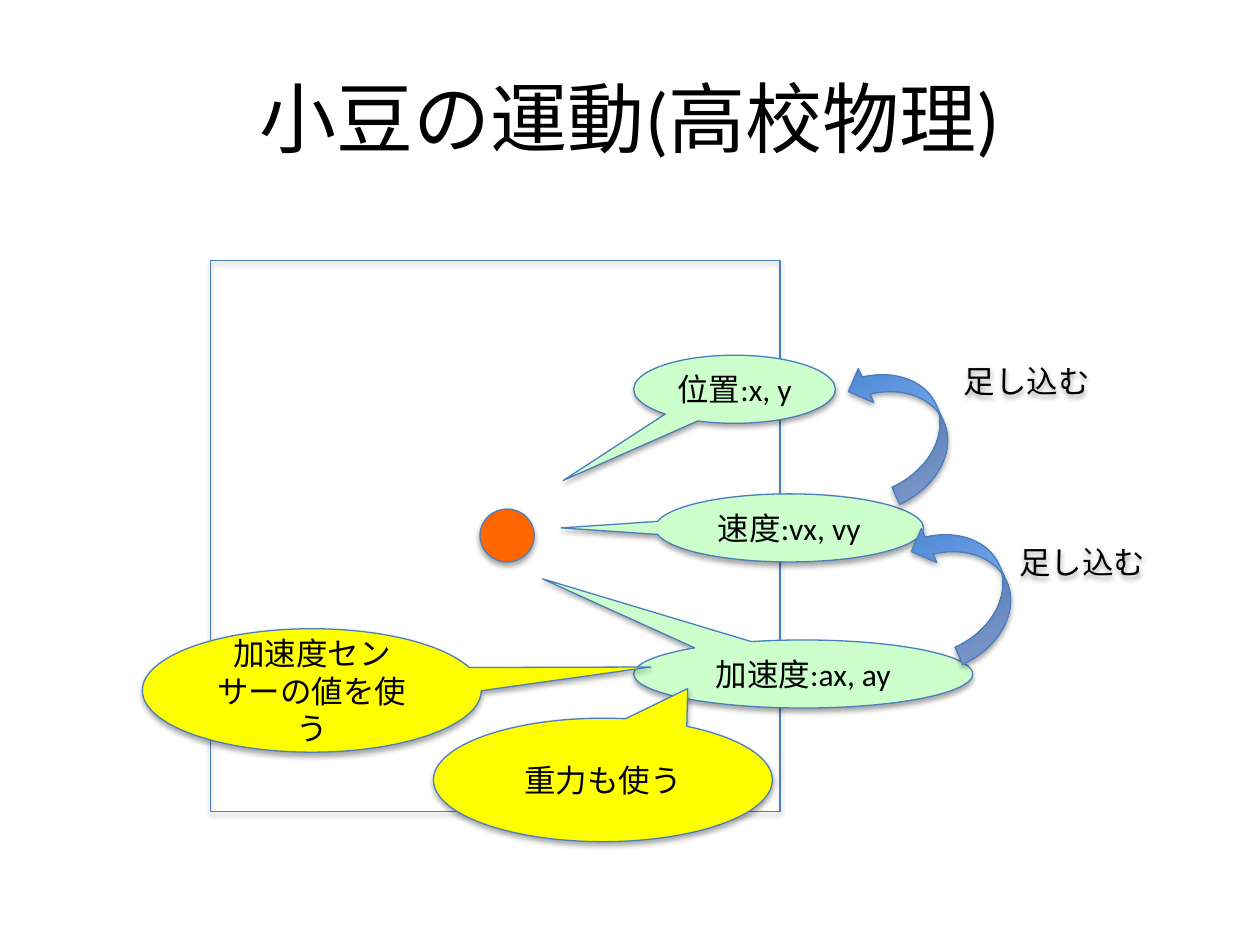
from lxml.etree import SubElement
from pptx import Presentation
from pptx.dml.color import RGBColor
from pptx.enum.shapes import MSO_SHAPE as SHAPE
from pptx.enum.text import MSO_ANCHOR, PP_ALIGN
from pptx.oxml.ns import qn
from pptx.util import Inches, Pt

THEME = dict(font="Calibri", title=44, body=18, text="000000", line="4B7EBC",
             bean="FF6600", state="CCFFCC", sensor="FFFF00",
             arrow=("3F80CE", "A4C4FF"))

# Content: boxes are (left, top, width, height) in inches
TITLE = "小豆の運動(高校物理)"
TITLE_BOX = (0.5, 0.3, 9, 1.25)
FRAME_BOX = (1.67, 2.07, 4.52, 4.37)
BEAN_BOX = (3.81, 4.04, 0.43, 0.42)
STATE_H, SENSOR_SIZE = 0.54, (2.69, 0.98)
# text, left, top, width, pointer tip relative to the callout's size
STATES = [
    ("位置:x, y", 5.03, 2.82, 1.6, (-0.85, 1.34)),
    ("速度:vx, vy", 5.2, 3.92, 2.13, (-0.85, 0)),
    ("加速度:ax, ay", 5.03, 5.08, 2.69, (-0.77, -1.4)),
]
SENSORS = [
    ("加速度センサーの値を使う", 1.13, 4.99, (1, -0.19)),
    ("重力も使う", 3.44, 5.7, (0.25, -0.74)),
]
ADD_TEXT = "足し込む"
ARROW_SIZE, ARROW_TURN = (0.59, 1.13), 155.5
LABEL_SIZE = (1.34, 0.4)
ARROWS = [(6.88, 2.8), (7.38, 4.07)]
LABELS = [(7.48, 2.82), (7.92, 4.26)]


def rgb(name):
    return RGBColor.from_string(THEME[name])


def add_text(sp, text, size="body", color="text"):
    tf = sp.text_frame
    tf.word_wrap = True
    tf.vertical_anchor = MSO_ANCHOR.MIDDLE
    p = tf.paragraphs[0]
    p.alignment = PP_ALIGN.CENTER
    r = p.add_run()
    r.text = text
    r.font.name = THEME["font"]
    r.font.size = Pt(THEME[size])
    r.font.color.rgb = rgb(color)


def add_shadow(sp):
    sp.shadow.inherit = False
    effects = sp._element.spPr.find(qn("a:effectLst"))
    shadow = SubElement(effects, qn("a:outerShdw"), blurRad=str(Pt(3.1)),
                        dist=str(Pt(1.8)), dir="5400000", rotWithShape="0")
    color = SubElement(shadow, qn("a:srgbClr"), val="000000")
    SubElement(color, qn("a:alpha"), val="35000")


def add_part(slide, kind, box, fill=None, outlined=True, tip=()):
    sp = slide.shapes.add_shape(kind, *map(Inches, box))
    if fill:
        sp.fill.solid()
        sp.fill.fore_color.rgb = rgb(fill)
    else:
        sp.fill.background()
    if outlined:
        sp.line.color.rgb = rgb("line")
        sp.line.width = Pt(0.75)
    else:
        sp.line.fill.background()
    for i, value in enumerate(tip):
        sp.adjustments[i] = value
    add_shadow(sp)
    return sp


def add_arrow(slide, box):
    sp = add_part(slide, SHAPE.CURVED_RIGHT_ARROW, box)
    sp.rotation = ARROW_TURN
    sp.fill.gradient()
    sp.fill.gradient_angle = 90
    for stop, color in zip(sp.fill.gradient_stops, THEME["arrow"]):
        stop.color.rgb = RGBColor.from_string(color)


def main():
    prs = Presentation()
    prs.slide_width, prs.slide_height = Inches(10), Inches(7.5)
    slide = prs.slides.add_slide(prs.slide_layouts[5])

    # Title
    title = slide.shapes.title
    title.left, title.top, title.width, title.height = map(Inches, TITLE_BOX)
    add_text(title, TITLE, size="title")

    # Frame and bean
    add_part(slide, SHAPE.RECTANGLE, FRAME_BOX)
    add_part(slide, SHAPE.OVAL, BEAN_BOX, fill="bean")

    # State callouts
    for text, x, y, w, tip in STATES:
        sp = add_part(slide, SHAPE.OVAL_CALLOUT, (x, y, w, STATE_H),
                      fill="state", tip=tip)
        add_text(sp, text)

    # Accumulation arrows and their labels
    for pos in ARROWS:
        add_arrow(slide, pos + ARROW_SIZE)
    for pos in LABELS:
        sp = add_part(slide, SHAPE.RECTANGLE, pos + LABEL_SIZE, outlined=False)
        add_text(sp, ADD_TEXT)

    # Sensor callouts
    for text, x, y, tip in SENSORS:
        sp = add_part(slide, SHAPE.OVAL_CALLOUT, (x, y) + SENSOR_SIZE,
                      fill="sensor", tip=tip)
        add_text(sp, text)

    prs.save("out.pptx")


if __name__ == "__main__":
    main()
